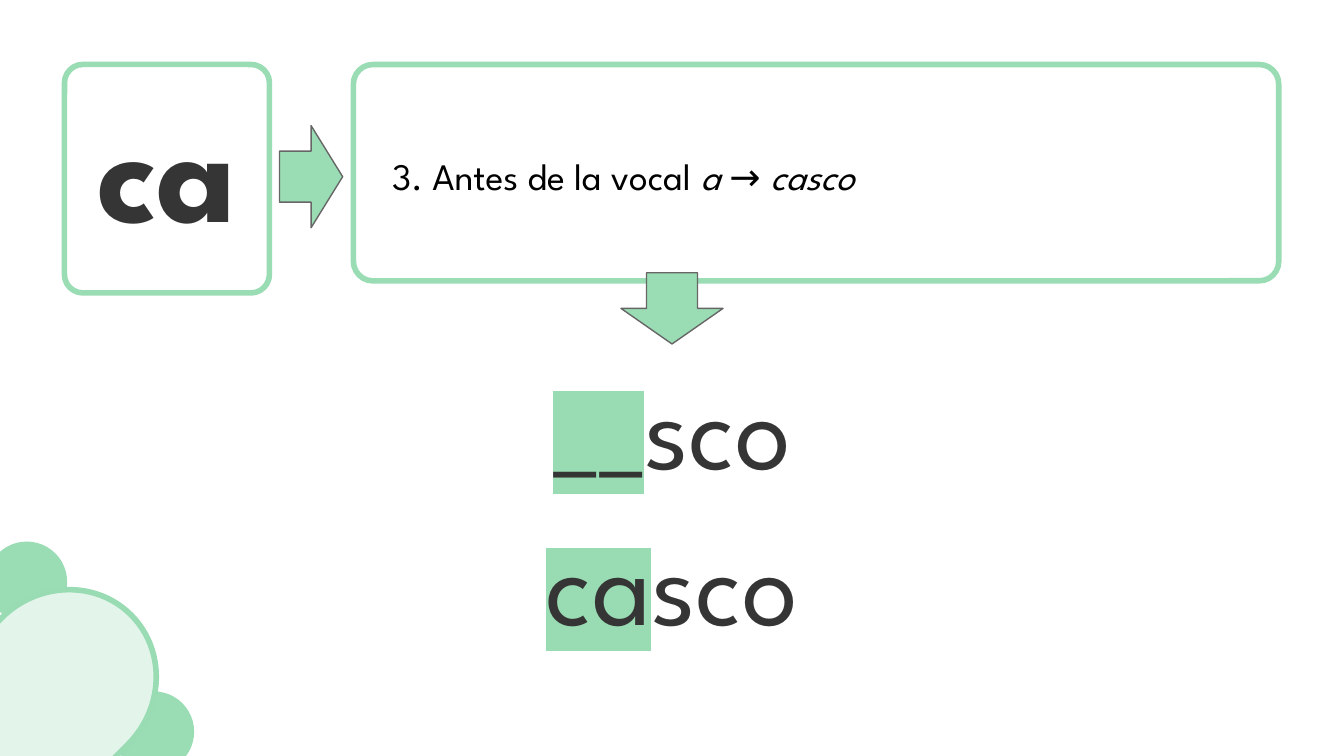
from pptx import Presentation
from pptx.util import Pt
from pptx.dml.color import RGBColor as RGB
from pptx.enum.shapes import MSO_SHAPE as Geo
from pptx.enum.text import MSO_ANCHOR as Anchor, PP_ALIGN as Align
from pptx.oxml.ns import qn
from lxml.etree import Element, SubElement

SCALE = 4572
COLORS = {"green": "9ADCB4", "mark": "99DBB3", "pale": "E3F5EA",
          "dark": "363535", "black": "000000", "gray": "666666"}


class Deck:
    """Builds a slide in one style, with lengths in px at 200 to the inch."""

    def __init__(self, wide, high):
        self.font = "League Spartan"
        self.prs = Presentation()
        self.prs.slide_width = wide * SCALE
        self.prs.slide_height = high * SCALE
        self.slide = self.prs.slides.add_slide(self.prs.slide_layouts[6])

    def shape(self, geo, box, fill=None, line=None, width=3, turn=0, round=None):
        item = self.slide.shapes.add_shape(geo, *(n * SCALE for n in box))
        item.shadow.inherit = False
        item.rotation = turn
        if round is not None:
            item.adjustments[0] = round
        if fill:
            item.fill.solid()
            item.fill.fore_color.rgb = RGB.from_string(COLORS[fill])
        else:
            item.fill.background()
        if line:
            item.line.color.rgb = RGB.from_string(COLORS[line])
            item.line.width = Pt(width)
        else:
            item.line.fill.background()

    def card(self, box):
        self.shape(Geo.ROUNDED_RECTANGLE, box, line="green", round=0.09)

    def arrow(self, box, turn=0):
        self.shape(Geo.RIGHT_ARROW, box, "green", "gray", 0.75, turn)

    def text(self, box, parts, size, color="dark", align=Align.CENTER, bold=False):
        frame = self.slide.shapes.add_textbox(*(n * SCALE for n in box)).text_frame
        frame.word_wrap = True
        frame.vertical_anchor = Anchor.BOTTOM
        frame.margin_left = frame.margin_right = 20 * SCALE
        frame.margin_top = frame.margin_bottom = 20 * SCALE
        para = frame.paragraphs[0]
        para.alignment = align
        for words, look in parts:
            run = para.add_run()
            run.text = words
            font = run.font
            font.name, font.size = self.font, Pt(size)
            font.bold, font.italic = bold, look == "italic"
            font.color.rgb = RGB.from_string(COLORS[color])
            if look == "mark":
                self.mark(run)

    def mark(self, run):
        tint = Element(qn("a:highlight"))
        SubElement(tint, qn("a:srgbClr")).set("val", COLORS["mark"])
        run.font._element.find(qn("a:solidFill")).addnext(tint)

    def save(self):
        self.prs.save("out.pptx")


def main():
    deck = Deck(2000, 1125)
    for left, top in ((-20, 806), (169, 1029)):
        deck.shape(Geo.OVAL, (left, top, 120, 120), "green")
    deck.shape(Geo.FLOWCHART_DELAY, (-44, 881, 280, 266), "pale", "mark", turn=315)
    deck.shape(Geo.RECTANGLE, (-136, 1046, 254, 150), "pale", turn=45)

    deck.card((96, 96, 305, 340))
    for top, start in ((506, "__"), (739, "ca")):
        deck.text((0, top, 2000, 246), [(start, "mark"), ("sco", None)], 60)
    deck.card((526, 96, 1377, 322))
    deck.arrow((416, 187, 94, 152))
    deck.arrow((947, 383, 106, 152), 90)

    deck.text((65, 97, 366, 296), [("ca", None)], 76, bold=True)
    rule = [("3. Antes de la vocal ", None), ("a", "italic"),
            (" → ", None), ("casco", "italic")]
    deck.text((564, 207, 1376, 108), rule, 20, "black", Align.LEFT)
    deck.save()


if __name__ == "__main__":
    main()
